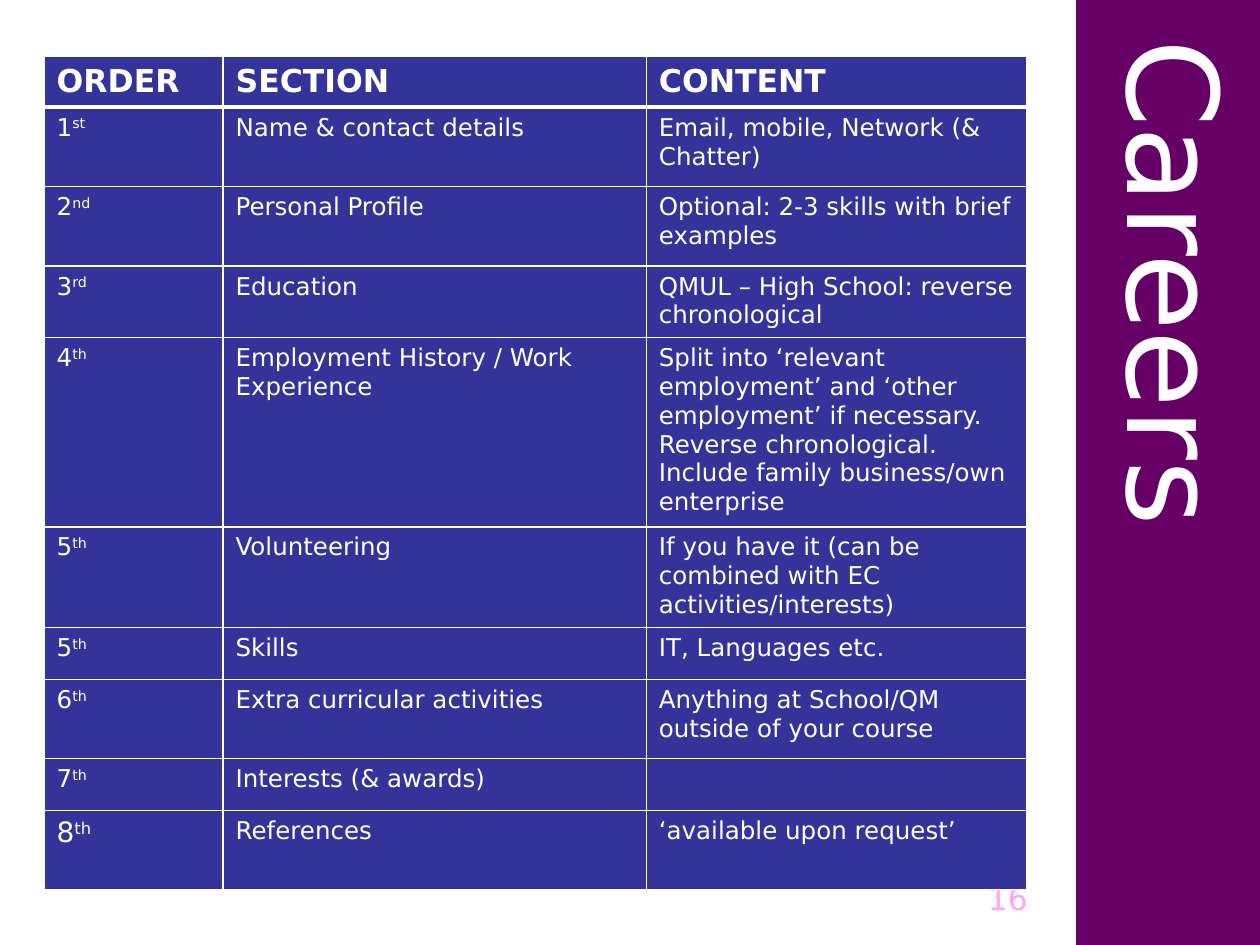
"""Build the Careers slide that lists the sections of a CV in order."""
from dataclasses import dataclass

from lxml import etree
from pptx import Presentation
from pptx.dml.color import RGBColor
from pptx.enum import text
from pptx.oxml.ns import qn
from pptx.util import Inches, Pt


@dataclass(frozen=True)
class Theme:
    """Colours, font and type sizes."""
    font: str = "DejaVu Sans"
    white: str = "FFFFFF"
    band: str = "660066"
    cell: str = "333399"
    number: str = "FFA3FF"
    title_size: int = 72
    head_size: int = 18
    body_size: int = 14
    last_order_size: int = 16


HEADINGS = ("ORDER", "SECTION", "CONTENT")
SECTIONS = (
    ("1st", "Name & contact details", "Email, mobile, Network (& Chatter)"),
    ("2nd", "Personal Profile", "Optional: 2-3 skills with brief examples"),
    ("3rd", "Education", "QMUL – High School: reverse chronological"),
    ("4th", "Employment History / Work Experience",
     "Split into ‘relevant employment’ and ‘other employment’ if necessary. "
     "Reverse chronological.\vInclude family business/own enterprise"),
    ("5th", "Volunteering",
     "If you have it (can be combined with EC activities/interests)"),
    ("5th", "Skills", "IT, Languages etc."),
    ("6th", "Extra curricular activities",
     "Anything at School/QM outside of your course"),
    ("7th", "Interests (& awards)", ""),
    ("8th", "References", "‘available upon request’"),
)
COLUMN_WIDTHS = (1.42, 3.36, 3.02)
ROW_HEIGHTS = (0.4, 0.63, 0.63, 0.57, 1.5, 0.8, 0.41, 0.63, 0.41, 0.63)


class SlideBuilder:
    """Hold the theme and the current slide."""

    def __init__(self, slide, theme):
        """Keep the slide and its theme."""
        self.slide = slide
        self.theme = theme

    def style(self, paragraph, size, color, bold=False):
        """Set the font of a paragraph."""
        font = paragraph.font
        font.name, font.size, font.bold = self.theme.font, Pt(size), bold
        font.color.rgb = RGBColor.from_string(color)

    def title_band(self, words, left, top, width, height):
        """Turn the title into a filled band with vertical text."""
        title = self.slide.shapes.title
        title.left, title.top = Inches(left), Inches(top)
        title.width, title.height = Inches(width), Inches(height)
        title.fill.solid()
        title.fill.fore_color.rgb = RGBColor.from_string(self.theme.band)
        frame = title.text_frame
        frame.text = words
        frame.auto_size = text.MSO_AUTO_SIZE.NONE
        frame.word_wrap = False
        frame.vertical_anchor = text.MSO_ANCHOR.MIDDLE
        frame.margin_left, frame.margin_top = Inches(0.35), Inches(0.31)
        frame.margin_right = frame.margin_bottom = Inches(0.2)
        frame._txBody.bodyPr.set("vert", "eaVert")
        heading = frame.paragraphs[0]
        heading.alignment = text.PP_ALIGN.LEFT
        self.style(heading, self.theme.title_size, self.theme.white)

    def page_number(self, number, left, top, width, height):
        """Add the page number."""
        box = self.slide.shapes.add_textbox(
            Inches(left), Inches(top), Inches(width), Inches(height))
        frame = box.text_frame
        frame.margin_left = frame.margin_right = 0
        frame.margin_top = frame.margin_bottom = 0
        frame.text = number
        self.style(frame.paragraphs[0], self.theme.head_size, self.theme.number)

    def borders(self, cell, **widths):
        """Draw the four sides of a cell, 1 pt unless a width is given."""
        properties = cell._tc.get_or_add_tcPr()
        for side in "LRTB":
            line = etree.SubElement(properties, qn(f"a:ln{side}"),
                                    w=str(Pt(widths.get(side, 1))))
            fill = etree.SubElement(line, qn("a:solidFill"))
            etree.SubElement(fill, qn("a:srgbClr"), val=self.theme.white)

    def ordinal(self, paragraph, words):
        """Write a number followed by its raised ending."""
        paragraph.add_run().text = words[:-2]
        ending = paragraph.add_run()
        ending.text = words[-2:]
        ending._r.get_or_add_rPr().set("baseline", "30000")

    def section_table(self, headings, sections, left, top):
        """Add the table of sections."""
        rows = (headings, *sections)
        table = self.slide.shapes.add_table(
            len(rows), len(headings), Inches(left), Inches(top),
            Inches(sum(COLUMN_WIDTHS)), Inches(sum(ROW_HEIGHTS))).table
        for column, width in zip(table.columns, COLUMN_WIDTHS):
            column.width = Inches(width)
        for row, height in zip(table.rows, ROW_HEIGHTS):
            row.height = Inches(height)
        for r, row in enumerate(rows):
            for c, words in enumerate(row):
                cell = table.cell(r, c)
                rule = {0: {"B": 3}, 1: {"T": 3}}.get(r, {})
                self.borders(cell, **rule)
                cell.fill.solid()
                cell.fill.fore_color.rgb = RGBColor.from_string(self.theme.cell)
                paragraph = cell.text_frame.paragraphs[0]
                size = self.theme.body_size
                if r == 0:
                    size = self.theme.head_size
                elif c == 0 and r == len(sections):
                    size = self.theme.last_order_size
                if r and c == 0:
                    self.ordinal(paragraph, words)
                else:
                    paragraph.text = words
                self.style(paragraph, size, self.theme.white, bold=r == 0)


def main():
    """Build and save the slide."""
    deck = Presentation()
    deck.slide_width, deck.slide_height = Inches(10), Inches(7.5)
    slide = deck.slides.add_slide(deck.slide_layouts[5])
    builder = SlideBuilder(slide, Theme())
    builder.page_number("16", 7.84, 6.98, 0.43, 0.3)
    builder.title_band("Careers", 8.54, 0, 1.46, 7.5)
    builder.section_table(HEADINGS, SECTIONS, 0.35, 0.45)
    deck.save("out.pptx")


if __name__ == "__main__":
    main()
